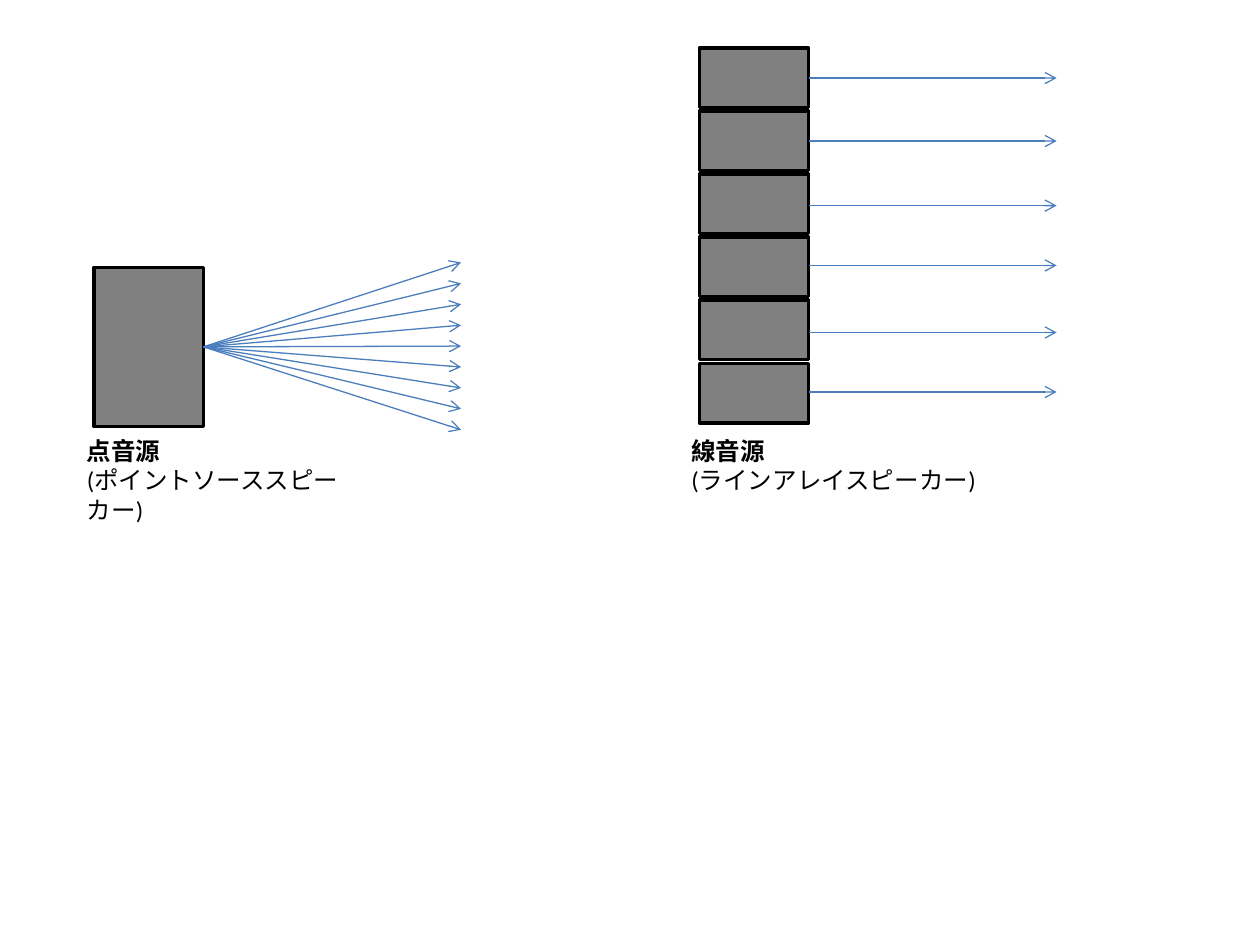
from dataclasses import dataclass

from lxml.etree import SubElement
from pptx import Presentation
from pptx.dml.color import RGBColor
from pptx.enum.shapes import MSO_CONNECTOR as Connector, MSO_SHAPE as Preset
from pptx.enum.text import MSO_AUTO_SIZE as AutoSize
from pptx.oxml.ns import qn
from pptx.slide import Slide
from pptx.util import Pt

BLACK = RGBColor(0x00, 0x00, 0x00)
GRAY = RGBColor(0x80, 0x80, 0x80)
BLUE = RGBColor(0x4B, 0x7E, 0xBC)

CABINET_WIDTH = 62.5
FONT = {"name": "Calibri", "size": Pt(14)}


@dataclass
class Cabinet:
    left: float
    top: float
    height: float


@dataclass
class Ray:
    start_x: float
    start_y: float
    end_x: float
    end_y: float


@dataclass
class Caption:
    left: float
    heading: str
    detail: str


def draw_cabinet(slide: Slide, cabinet: Cabinet) -> None:
    shape = slide.shapes.add_shape(
        Preset.RECTANGLE, Pt(cabinet.left), Pt(cabinet.top),
        Pt(CABINET_WIDTH), Pt(cabinet.height))
    shape.shadow.inherit = False
    shape.fill.solid()
    shape.fill.fore_color.rgb = GRAY
    shape.line.color.rgb = BLACK
    shape.line.width = Pt(2)


def draw_ray(slide: Slide, ray: Ray) -> None:
    connector = slide.shapes.add_connector(
        Connector.STRAIGHT, Pt(ray.start_x), Pt(ray.start_y),
        Pt(ray.end_x), Pt(ray.end_y))
    connector.line.color.rgb = BLUE
    connector.line.width = Pt(0.75)
    # Open arrowhead at the far end, and no shadow
    properties = connector.element.spPr
    SubElement(properties.find(qn("a:ln")), qn("a:tailEnd"), type="arrow")
    SubElement(properties, qn("a:effectLst"))


def draw_caption(slide: Slide, caption: Caption) -> None:
    shape = slide.shapes.add_textbox(
        Pt(caption.left), Pt(245.5), Pt(181.5), Pt(41))
    frame = shape.text_frame
    frame.word_wrap = True
    frame.auto_size = AutoSize.SHAPE_TO_FIT_TEXT
    frame.text = f"{caption.heading}\n{caption.detail}"
    for paragraph, bold in zip(frame.paragraphs, (True, False)):
        font = paragraph.runs[0].font
        for name, value in {**FONT, "bold": bold}.items():
            setattr(font, name, value)
        font.color.rgb = BLACK


def main() -> None:
    presentation = Presentation()
    presentation.slide_width, presentation.slide_height = Pt(720), Pt(540)
    slide = presentation.slides.add_slide(presentation.slide_layouts[6])

    # Point source: one cabinet with rays fanning out
    draw_cabinet(slide, Cabinet(53.8, 152.8, 91))
    for index in range(9):
        draw_ray(slide, Ray(116.3, 198.2, 263.5, 150 + 11.95 * index))

    # Line source: stacked cabinets with parallel rays
    for index in range(6):
        draw_cabinet(slide, Cabinet(399.6, 27.4 + 36.04 * index, 34))
    for y in (44.6, 80.6, 117.5, 151.7, 190, 224):
        draw_ray(slide, Ray(462.2, y, 603.8, y))

    # Captions
    for caption in (
        Caption(42.5, "点音源", "(ポイントソーススピーカー)"),
        Caption(388, "線音源", "(ラインアレイスピーカー)"),
    ):
        draw_caption(slide, caption)

    presentation.save("out.pptx")


if __name__ == "__main__":
    main()
